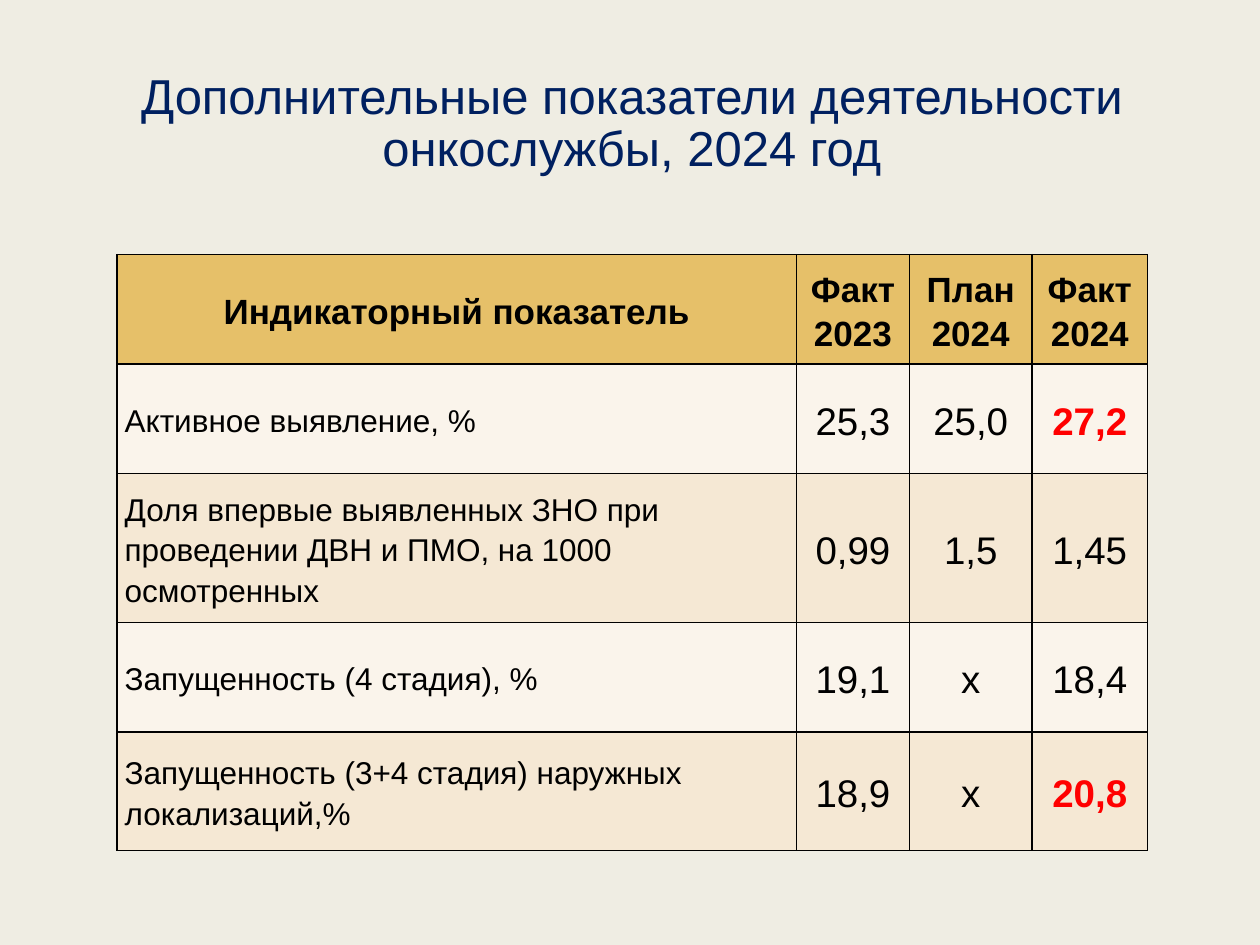
"""Build a slide with a table of oncology service indicators."""
from lxml.etree import SubElement
from pptx import Presentation
from pptx.dml.color import RGBColor
from pptx.enum.text import MSO_ANCHOR, PP_ALIGN
from pptx.oxml.ns import qn
from pptx.util import Inches, Pt

TITLE = "Дополнительные показатели деятельности\nонкослужбы, 2024 год"
HEADER = ("Индикаторный показатель", "Факт 2023", "План 2024", "Факт 2024")
INDICATORS = [
    ("Активное выявление, %", "25,3", "25,0", "27,2"),
    ("Доля впервые выявленных ЗНО при проведении ДВН и ПМО, на 1000 осмотренных",
     "0,99", "1,5", "1,45"),
    ("Запущенность (4 стадия), %", "19,1", "х", "18,4"),
    ("Запущенность (3+4 стадия) наружных локализаций,%", "18,9", "х", "20,8"),
]
HIGHLIGHTED = {"27,2", "20,8"}
COLUMN_WIDTHS = (5.39, 0.9, 0.97, 0.92)
ROW_HEIGHTS = (0.87, 0.87, 1.18, 0.87, 0.94)
HEADER_FILL = "E6C069"
BAND_FILLS = ("FAF4EB", "F5E8D4")
TITLE_FORMAT = {"size": Pt(28), "name": "Arial"}
HEADER_FORMAT = {"size": Pt(20), "name": "Arial", "bold": True}
LABEL_FORMAT = {"size": Pt(18), "name": "Arial", "bold": False}
VALUE_FORMAT = {"size": Pt(22), "name": "Arial", "bold": False}
HIGHLIGHT_FORMAT = {**VALUE_FORMAT, "bold": True}
CELL_FORMAT = {
    "vertical_anchor": MSO_ANCHOR.MIDDLE,
    "margin_left": Inches(0.06), "margin_right": Inches(0.06),
    "margin_top": 0, "margin_bottom": 0,
}


def set_color(color_format, value):
    color_format.rgb = RGBColor.from_string(value)


def apply_format(target, values):
    for name, value in values.items():
        setattr(target, name, value)


def write_text(paragraph, text, font_format, color, alignment, line_spacing):
    paragraph.text = text
    paragraph.alignment = alignment
    paragraph.line_spacing = line_spacing
    for run in paragraph.runs:
        apply_format(run.font, font_format)
        set_color(run.font.color, color)


def fill_background(fill, color):
    fill.solid()
    set_color(fill.fore_color, color)


def add_borders(cell):
    properties = cell._tc.get_or_add_tcPr()
    for position, side in enumerate(("lnL", "lnR", "lnT", "lnB")):
        line = properties.makeelement(qn(f"a:{side}"), {"w": str(Pt(1))})
        fill = SubElement(line, qn("a:solidFill"))
        SubElement(fill, qn("a:srgbClr"), val="000000")
        properties.insert(position, line)


def add_title(slide):
    title = slide.shapes.add_textbox(Inches(0.21), Inches(0.52), Inches(9.61), Inches(0.94))
    frame = title.text_frame
    apply_format(frame, {"word_wrap": True, "vertical_anchor": MSO_ANCHOR.MIDDLE})
    write_text(frame.paragraphs[0], TITLE, TITLE_FORMAT, "002060", PP_ALIGN.CENTER, 0.89)


def choose_format(row_index, column_index, text):
    if row_index == 0:
        return HEADER_FORMAT, "000000"
    if column_index == 0:
        return LABEL_FORMAT, "000000"
    if text in HIGHLIGHTED:
        return HIGHLIGHT_FORMAT, "FF0000"
    return VALUE_FORMAT, "000000"


def add_indicator_table(slide):
    rows = [HEADER, *INDICATORS]
    table = slide.shapes.add_table(
        len(rows), len(HEADER), Inches(0.93), Inches(2.02),
        Inches(sum(COLUMN_WIDTHS)), Inches(sum(ROW_HEIGHTS))).table
    for column, width in zip(table.columns, COLUMN_WIDTHS):
        column.width = Inches(width)
    for row, height in zip(table.rows, ROW_HEIGHTS):
        row.height = Inches(height)
    for row_index, texts in enumerate(rows):
        band = BAND_FILLS[(row_index - 1) % 2] if row_index else HEADER_FILL
        for column_index, text in enumerate(texts):
            cell = table.cell(row_index, column_index)
            apply_format(cell, CELL_FORMAT)
            fill_background(cell.fill, band)
            add_borders(cell)
            is_label = row_index and column_index == 0
            alignment = PP_ALIGN.LEFT if is_label else PP_ALIGN.CENTER
            font_format, color = choose_format(row_index, column_index, text)
            write_text(cell.text_frame.paragraphs[0], text, font_format, color, alignment, 1.15)


def main():
    presentation = Presentation()
    presentation.slide_width, presentation.slide_height = Inches(10), Inches(7.5)
    slide = presentation.slides.add_slide(presentation.slide_layouts[6])
    fill_background(slide.background.fill, "EFEDE3")
    add_title(slide)
    add_indicator_table(slide)
    presentation.save("out.pptx")


if __name__ == "__main__":
    main()
